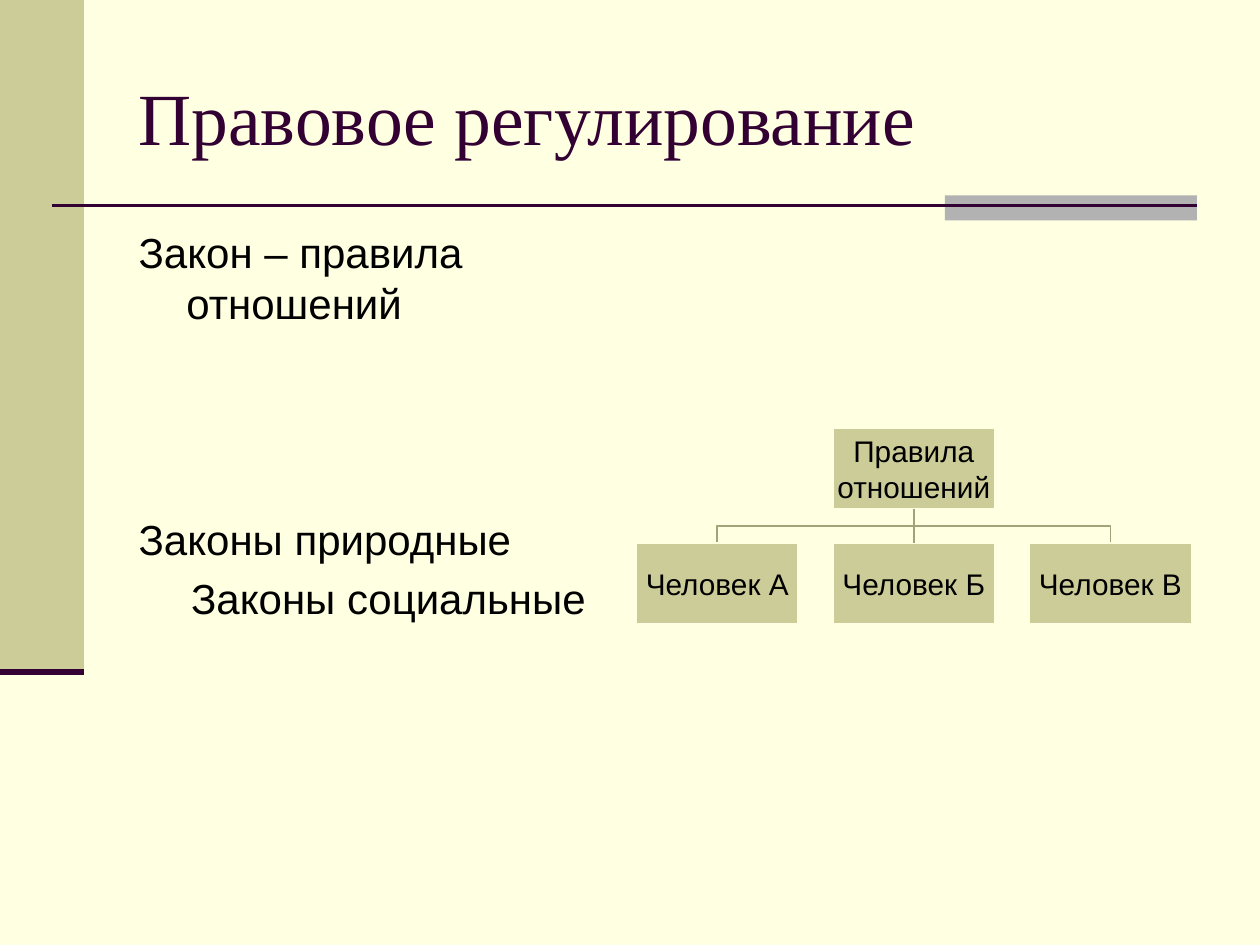
from dataclasses import dataclass

from lxml.etree import SubElement
from pptx import Presentation
from pptx.dml.color import RGBColor as Color
from pptx.enum.shapes import MSO_CONNECTOR as Connector, MSO_SHAPE as Shape
from pptx.enum.text import MSO_ANCHOR as Anchor, MSO_AUTO_SIZE as AutoSize, PP_ALIGN as Align
from pptx.oxml.ns import qn
from pptx.util import Inches, Pt


@dataclass(frozen=True)
class Theme:
    paper: str = "FFFFE1"
    olive: str = "CCCC99"
    branch: str = "A3A37B"
    gray: str = "B2B2B2"
    plum: str = "330033"
    ink: str = "000000"
    serif: str = "Times New Roman"
    sans: str = "Arial"
    title_size: int = 42
    body_size: int = 24
    box_size: int = 17


class SlideBuilder:
    columns, rows = 120, 90

    def __init__(self, deck, theme):
        self.deck, self.theme = deck, theme
        self.slide = deck.slides.add_slide(deck.slide_layouts[1])
        self.shapes = self.slide.shapes
        fill = self.slide.background.fill
        fill.solid()
        fill.fore_color.rgb = Color.from_string(theme.paper)

    def x(self, column):
        return round(self.deck.slide_width * column / self.columns)

    def y(self, row):
        return round(self.deck.slide_height * row / self.rows)

    def place(self, shape, left, top, width, height):
        shape.left, shape.top = self.x(left), self.y(top)
        shape.width, shape.height = self.x(width), self.y(height)

    def style_text(self, para, font, size, color, align=Align.LEFT):
        para.alignment = align
        for span in para.runs:
            span.font.name, span.font.size = font, Pt(size)
            span.font.color.rgb = Color.from_string(color)

    def style_line(self, shape, color, width):
        shape.line.color.rgb = Color.from_string(color)
        shape.line.width = Pt(width)

    def title(self, text, *area):
        theme, box = self.theme, self.shapes.title
        self.place(box, *area)
        frame = box.text_frame
        frame.text = text
        frame.auto_size = AutoSize.NONE
        frame.vertical_anchor = Anchor.MIDDLE
        self.style_text(frame.paragraphs[0], theme.serif, theme.title_size, theme.plum)

    def body(self, items, *area):
        theme, box = self.theme, self.slide.placeholders[1]
        self.place(box, *area)
        frame = box.text_frame
        frame.auto_size = AutoSize.NONE
        frame.text = "\n".join(text for text, _, _ in items)
        for para, (_, space, align) in zip(frame.paragraphs, items):
            para.space_before = Pt(space)
            self.style_text(para, theme.sans, theme.body_size, theme.ink, align)
            properties = para._p.get_or_add_pPr()
            properties.set("marL", str(Inches(0.38)))
            properties.set("indent", str(Inches(-0.38)))
            SubElement(properties, qn("a:buNone"))

    def block(self, color, *area):
        block = self.shapes.add_shape(Shape.RECTANGLE, 0, 0, 0, 0)
        self.place(block, *area)
        block.shadow.inherit = False
        block.fill.solid()
        block.fill.fore_color.rgb = Color.from_string(color)
        block.line.fill.background()
        return block

    def box(self, text, *area):
        theme = self.theme
        box = self.block(theme.olive, *area)
        self.style_line(box, theme.paper, 1)
        frame = box.text_frame
        frame.text = text
        frame.word_wrap = True
        frame.vertical_anchor = Anchor.MIDDLE
        frame.margin_left = frame.margin_right = Inches(0.01)
        frame.margin_top = frame.margin_bottom = Inches(0.01)
        self.style_text(frame.paragraphs[0], theme.sans, theme.box_size, theme.ink, Align.CENTER)
        return box

    def rule(self, color, width, left, top, right, bottom):
        rule = self.shapes.add_connector(
            Connector.STRAIGHT, self.x(left), self.y(top), self.x(right), self.y(bottom))
        self.style_line(rule, color, width)
        SubElement(rule._element.spPr, qn("a:effectLst"))
        return rule

    def elbow(self, start, end):
        (left, top), (right, bottom) = start, end
        middle = (top + bottom) / 2
        corners = [(left, middle), (right, middle), (right, bottom)]
        builder = self.shapes.build_freeform(self.x(left), self.y(top))
        builder.add_line_segments([(self.x(c), self.y(r)) for c, r in corners], close=False)
        elbow = builder.convert_to_shape()
        elbow.shadow.inherit = False
        elbow.fill.background()
        self.style_line(elbow, self.theme.branch, 1)

    def hierarchy(self, root, children, left, top, width, height, column_step, row_step):
        lefts = [left + index * column_step for index in range(len(children))]
        child_top, middle = top + row_step, len(children) // 2
        centers = [start + width / 2 for start in lefts]
        fork = (centers[middle], top + height)
        for index, center in enumerate(centers):
            if index != middle:
                self.elbow(fork, (center, child_top))
        parent = self.box(root, lefts[middle], top, width, height)
        boxes = [self.box(text, start, child_top, width, height)
                 for text, start in zip(children, lefts)]
        stem = self.rule(self.theme.branch, 1, *fork, centers[middle], child_top)
        stem.begin_connect(parent, 2)
        stem.end_connect(boxes[middle], 0)


def main():
    deck = Presentation()
    deck.slide_width, deck.slide_height = Inches(10), Inches(7.5)
    theme = Theme()
    page = SlideBuilder(deck, theme)
    page.block(theme.olive, 0, 0, 8, 64)
    page.block(theme.gray, 90, 18.6, 24, 2.4)
    page.rule(theme.plum, 1.5, 5, 19.6, 114, 19.6)
    page.rule(theme.plum, 3.5, 0, 64, 8, 64)
    page.title("Правовое регулирование", 12, 3.6, 102, 15)
    page.body([
        ("Закон – правила отношений", 4.8, Align.LEFT),
        ("Законы природные", 106.5, Align.LEFT),
        ("Законы социальные", 4.8, Align.CENTER),
    ], 12, 21, 50, 59.4)
    page.hierarchy("Правила отношений", ["Человек А", "Человек Б", "Человек В"],
                   60.6, 40.8, 15.44, 7.68, 18.72, 10.92)
    deck.save("out.pptx")


if __name__ == "__main__":
    main()
